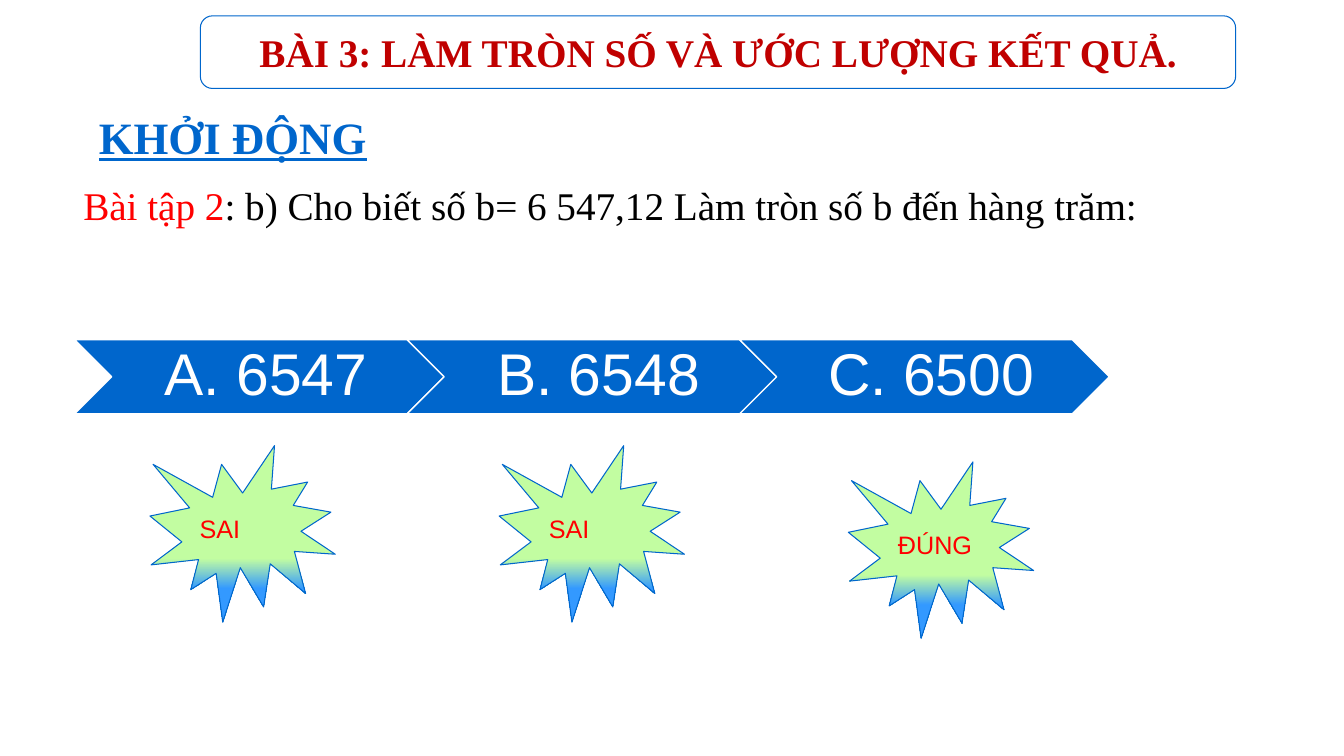
from dataclasses import dataclass
from pptx import Presentation
from pptx.dml.color import RGBColor
from pptx.enum.shapes import MSO_SHAPE
from pptx.enum.text import MSO_ANCHOR, PP_ALIGN
from pptx.util import Cm, Pt


@dataclass(frozen=True)
class Theme:
    """Fonts, type sizes and colours of the slide."""
    serif: str = "Times New Roman"
    sans: str = "Arial"
    head: int = 32
    body: int = 28
    choice: int = 42
    note: int = 18
    blue: str = "0066CC"
    sky: str = "3399FF"
    lime: str = "C2FDA1"
    red: str = "FF0000"
    dark: str = "C00000"
    black: str = "000000"
    white: str = "FFFFFF"


THEME = Theme()


def style(font, name, size, color, bold=False):
    """Set the face, size and colour of a font."""
    font.name, font.size, font.bold = name, Pt(size), bold
    font.color.rgb = RGBColor.from_string(color)


def draw(slide, kind, box, fill, line, width):
    """Add a preset shape in a box given in centimetres."""
    shape = slide.shapes.add_shape(kind, *map(Cm, box))
    shape.shadow.inherit = False
    if fill:
        shape.fill.solid()
        shape.fill.fore_color.rgb = RGBColor.from_string(fill)
    shape.line.color.rgb = RGBColor.from_string(line)
    shape.line.width = Pt(width)
    return shape


def write(shape, text, align, wrap):
    """Put one middle-anchored line in a shape and return its run."""
    frame = shape.text_frame
    frame.text = text
    frame.word_wrap = wrap
    frame.vertical_anchor = MSO_ANCHOR.MIDDLE
    frame.paragraphs[0].alignment = align
    return frame.paragraphs[0].runs[0]


def add_title(slide, box, text):
    """Draw the rounded lesson title."""
    kind = MSO_SHAPE.FLOWCHART_ALTERNATE_PROCESS
    shape = draw(slide, kind, box, THEME.white, THEME.blue, 0.75)
    run = write(shape, text, PP_ALIGN.CENTER, False)
    style(run.font, THEME.serif, THEME.body, THEME.dark, True)


def add_text(slide, box, parts):
    """Add a wrapped text box and return its runs."""
    frame = slide.shapes.add_textbox(*map(Cm, box)).text_frame
    frame.word_wrap = True
    for part in parts:
        frame.paragraphs[0].add_run().text = part
    return frame.paragraphs[0].runs


def add_head(slide, box, text):
    """Add the underlined section heading."""
    run, = add_text(slide, box, [text])
    style(run.font, THEME.serif, THEME.head, THEME.blue, True)
    run.font.underline = True


def add_task(slide, box, label, text):
    """Add the exercise with its red label."""
    runs = add_text(slide, box, [label, text])
    for run, color in zip(runs, (THEME.red, THEME.black)):
        style(run.font, THEME.serif, THEME.body, color)


def add_row(slide, box, step, names):
    """Draw the answers as a row of chevrons."""
    left, top, width, height = box
    for i, name in enumerate(names):
        place = (left + i * step, top, width, height)
        shape = draw(slide, MSO_SHAPE.CHEVRON, place, THEME.blue, THEME.white, 1)
        run = write(shape, name, PP_ALIGN.CENTER, True)
        style(run.font, THEME.sans, THEME.choice, THEME.white)
        frame = shape.text_frame
        frame.margin_left = Cm(0.48)
        frame.margin_right = frame.margin_top = frame.margin_bottom = Cm(0.15)
        frame.paragraphs[0].line_spacing = 0.9


def add_burst(slide, box, text):
    """Draw a verdict in a shaded burst."""
    shape = draw(slide, MSO_SHAPE.EXPLOSION1, box, None, THEME.blue, 0.75)
    shape.fill.gradient()
    shape.fill.gradient_angle = 270
    shades = ((0.64, THEME.lime), (0.81, THEME.sky))
    for stop, (place, color) in zip(shape.fill.gradient_stops, shades):
        stop.position = place
        stop.color.rgb = RGBColor.from_string(color)
    run = write(shape, text, PP_ALIGN.LEFT, False)
    style(run.font, THEME.sans, THEME.note, THEME.red)


def main():
    """Build the quiz slide and save it."""
    deck = Presentation()
    deck.slide_width, deck.slide_height = Cm(33.87), Cm(19.05)
    slide = deck.slides.add_slide(deck.slide_layouts[6])
    add_head(slide, (2.24, 2.64, 18.92, 1.8), "KHỞI ĐỘNG")
    add_task(slide, (1.85, 4.45, 32, 2.46), "Bài tập 2",
             ": b) Cho biết số b= 6 547,12 Làm tròn số b đến hàng trăm:")
    add_title(slide, (5.05, 0.4, 26.09, 1.83),
              "BÀI 3: LÀM TRÒN SỐ VÀ ƯỚC LƯỢNG KẾT QUẢ.")
    add_row(slide, (1.88, 8.56, 9.32, 1.87), 8.38,
            ("A. 6547", "B. 6548", "C. 6500"))
    verdicts = (("SAI", 11.23), ("SAI", 11.23), ("ĐÚNG", 11.64))
    for i, (text, top) in enumerate(verdicts):
        add_burst(slide, (3.78 + i * 8.8, top, 4.67, 4.45), text)
    deck.save("out.pptx")


if __name__ == "__main__":
    main()
